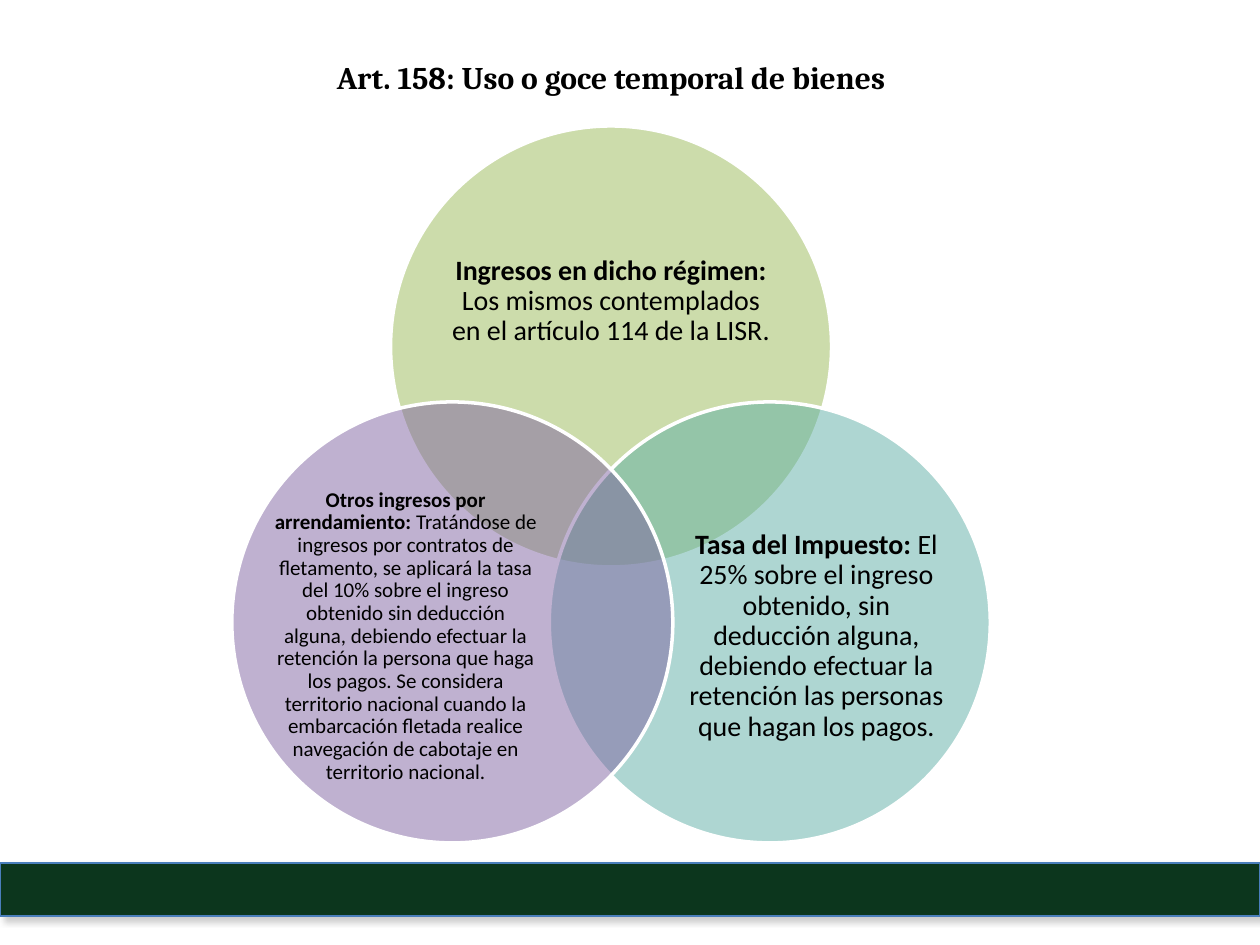
from dataclasses import dataclass

from lxml import etree
from pptx import Presentation
from pptx.dml.color import RGBColor
from pptx.enum.shapes import MSO_SHAPE
from pptx.enum.text import MSO_ANCHOR, PP_ALIGN
from pptx.oxml.ns import qn
from pptx.util import Inches, Pt

RECTANGLE, OVAL = MSO_SHAPE.RECTANGLE, MSO_SHAPE.OVAL
CENTER, MIDDLE, TOP = PP_ALIGN.CENTER, MSO_ANCHOR.MIDDLE, MSO_ANCHOR.TOP

COLORS = {
    "band": "0C361D",
    "band_line": "4A7EBB",
    "shadow": "808080",
    "income": "9BBB59",
    "rate": "5EAFA6",
    "lease": "8064A2",
    "white": "FFFFFF",
    "text": "000000",
}
DIAMETER = 3.5
Box = tuple[float, float, float, float]


@dataclass
class Circle:
    color: str
    left: float
    top: float
    text_box: Box
    size: int
    heading: str
    body: str


CIRCLES = [
    Circle("income", 3.1, 1, (3.57, 1.61, 2.56, 1.57), 16,
           "Ingresos en dicho régimen:",
           " Los mismos contemplados en el artículo 114 de la LISR."),
    Circle("rate", 4.36, 3.19, (5.43, 4.09, 2.1, 1.92), 16,
           "Tasa del Impuesto: ",
           "El 25% sobre el ingreso obtenido, sin deducción alguna, debiendo "
           "efectuar la retención las personas que hagan los pagos."),
    Circle("lease", 1.84, 3.19, (2.17, 4.09, 2.1, 1.92), 12,
           "Otros ingresos por arrendamiento: ",
           "Tratándose de ingresos por contratos de fletamento, se aplicará la "
           "tasa del 10% sobre el ingreso obtenido sin deducción alguna, debiendo "
           "efectuar la retención la persona que haga los pagos. Se considera "
           "territorio nacional cuando la embarcación fletada realice navegación "
           "de cabotaje en territorio nacional."),
]


def rgb(name: str) -> RGBColor:
    return RGBColor.from_string(COLORS[name])


def add_alpha(color_element, percent: int) -> None:
    etree.SubElement(color_element, qn("a:alpha"), val=str(percent * 1000))


def add_figure(shapes, kind, box: Box, fill: str, line: str, width: float):
    figure = shapes.add_shape(kind, *map(Inches, box))
    figure.shadow.inherit = False
    figure.fill.solid()
    figure.fill.fore_color.rgb = rgb(fill)
    figure.line.color.rgb = rgb(line)
    figure.line.width = Pt(width)
    return figure


def add_text(shapes, box: Box, spans: list[tuple[str, bool]], font: str,
             size: int, anchor=TOP, inset: float | None = None,
             spacing: float = 1.0) -> None:
    frame = shapes.add_textbox(*map(Inches, box)).text_frame
    frame.word_wrap = True
    frame.vertical_anchor = anchor
    if inset is not None:
        for side in ("left", "top", "right", "bottom"):
            setattr(frame, f"margin_{side}", Inches(inset))
    para = frame.paragraphs[0]
    para.alignment = CENTER
    para.line_spacing = spacing
    for text, bold in spans:
        span = para.add_run()
        span.text = text
        for name, value in {"name": font, "size": Pt(size), "bold": bold}.items():
            setattr(span.font, name, value)
        span.font.color.rgb = rgb("text")


def add_band(page) -> None:
    band = add_figure(page.shapes, RECTANGLE, (0, 6.85, 10, 0.42),
                      "band", "band_line", 0.75)
    effects = band.element.spPr.find(qn("a:effectLst"))
    shadow = etree.SubElement(effects, qn("a:outerShdw"), blurRad=str(Pt(4)),
                              dist=str(Pt(3)), dir=str(45 * 60000),
                              rotWithShape="0")
    color = etree.SubElement(shadow, qn("a:srgbClr"), val=COLORS["shadow"])
    add_alpha(color, 40)


def add_circle(shapes, circle: Circle) -> None:
    disc = add_figure(shapes, OVAL, (circle.left, circle.top, DIAMETER, DIAMETER),
                      circle.color, "white", 2)
    fill = disc.element.spPr.find(qn("a:solidFill"))
    add_alpha(fill.find(qn("a:srgbClr")), 50)
    add_text(shapes, circle.text_box,
             [(circle.heading, True), (circle.body, False)],
             "Calibri", circle.size, anchor=MIDDLE, inset=0, spacing=0.9)


def main() -> None:
    deck = Presentation()
    deck.slide_width, deck.slide_height = Inches(10), Inches(7.5)
    page = deck.slides.add_slide(deck.slide_layouts[6])

    # Footer band and title
    add_band(page)
    add_text(page.shapes, (0.36, 0.41, 8.98, 0.4),
             [("Art. 158: Uso o goce temporal de bienes", True)], "Cambria", 18)

    # Venn diagram
    diagram = page.shapes.add_group_shape()
    for circle in CIRCLES:
        add_circle(diagram.shapes, circle)

    deck.save("out.pptx")


if __name__ == "__main__":
    main()
